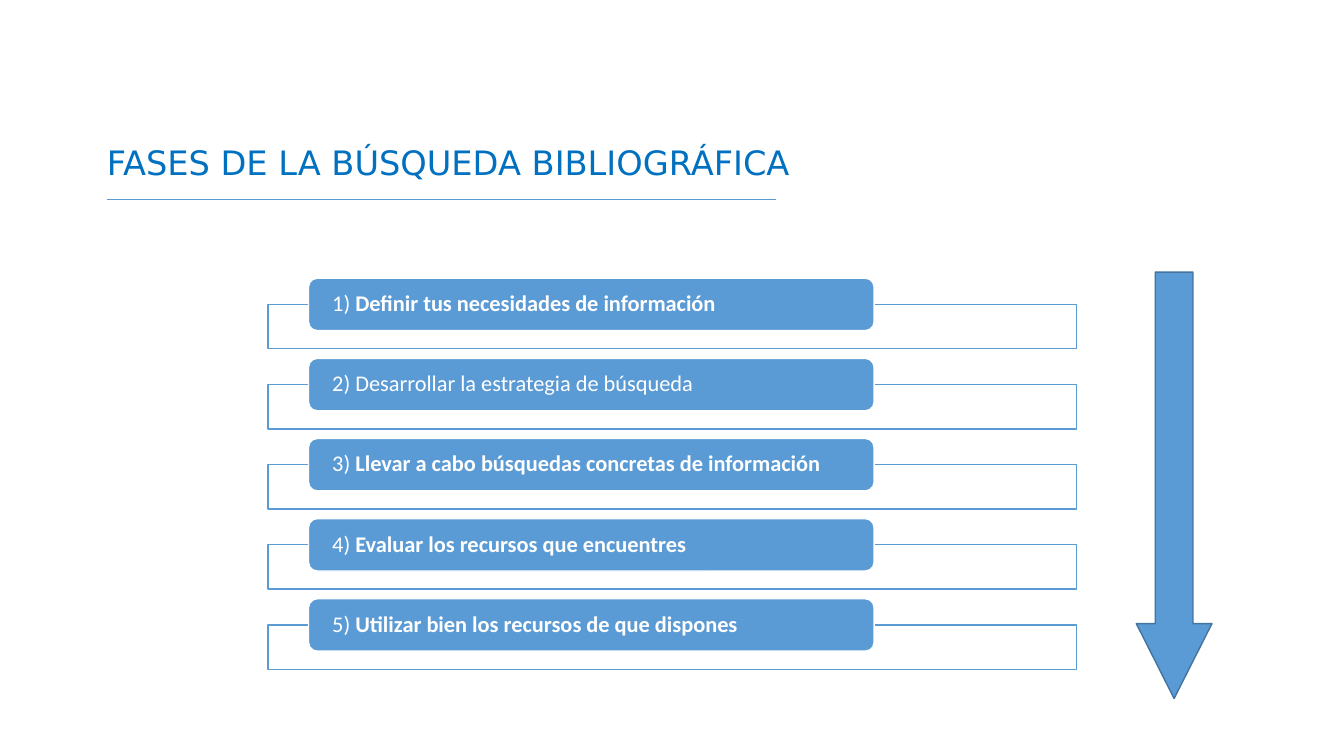
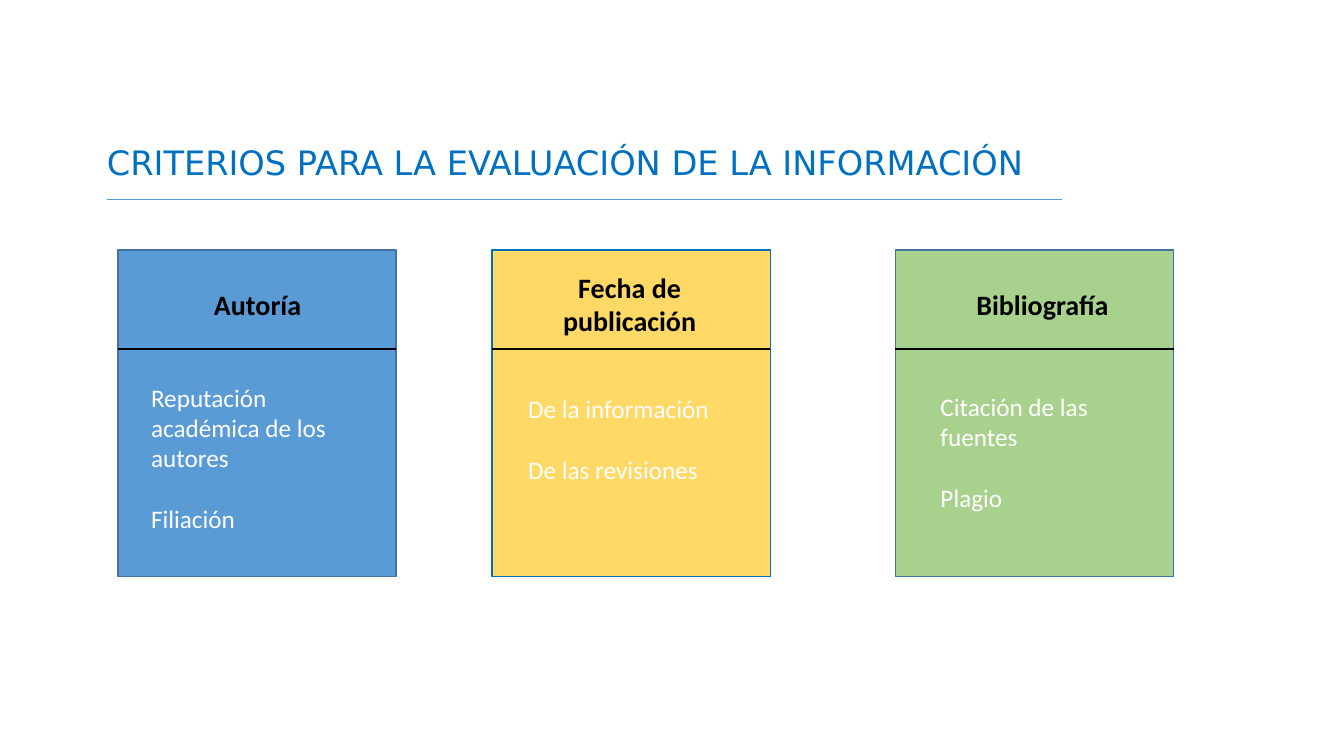
import pptx
import pptx.util
import pptx.dml.color
import pptx.enum.shapes
import pptx.enum.text
import pptx.oxml.ns
import lxml.etree

Inches = pptx.util.Inches
Pt = pptx.util.Pt
SHAPES = pptx.enum.shapes.MSO_SHAPE
ANCHOR = pptx.enum.text.MSO_ANCHOR
ALIGN = pptx.enum.text.PP_ALIGN

COLORS = {
    "title": "0070C0",
    "blue": "5B9BD5",
    "dark_blue": "43739E",
    "yellow": "FFD966",
    "green": "A9D18E",
    "white": "FFFFFF",
    "black": "000000",
}
BODY_FONT = "Calibri"
TITLE_FONT = "DejaVu Sans"

PHASES = [
    ("Definir tus necesidades de información", True),
    ("Desarrollar la estrategia de búsqueda", False),
    ("Llevar a cabo búsquedas concretas de información", True),
    ("Evaluar los recursos que encuentres", True),
    ("Utilizar bien los recursos de que dispones", True),
]
PHASE_TOP = 2.76
PHASE_PITCH = 3.18 / 4

CARD_TOP, CARD_WIDTH, CARD_HEIGHT = 2.48, 2.76, 3.24
CARDS = [
    {"left": 1.17, "fill": "blue", "line": "dark_blue",
     "heading": "Autoría", "heading_box": (1.5, 2.11),
     "items": ["Reputación académica de los autores", "Filiación"],
     "items_box": (1.4, 3.74, 2.46, 1.62)},
    {"left": 4.88, "fill": "yellow", "line": "title",
     "heading": "Fecha de publicación", "heading_box": (5.13, 2.23),
     "items": ["De la información", "De las revisiones"],
     "items_box": (5.14, 3.85, 2.23, 1.01)},
    {"left": 8.88, "fill": "green", "line": "dark_blue",
     "heading": "Bibliografía", "heading_box": (9.22, 2.24),
     "items": ["Citación de las fuentes", "Plagio"],
     "items_box": (9.23, 3.83, 2.24, 1.31)},
]


def rgb(name):
    return pptx.dml.color.RGBColor.from_string(COLORS[name])


def add_run(paragraph, text, size, color, bold=False, font=BODY_FONT):
    run = paragraph.add_run()
    run.text = text
    run.font.name = font
    run.font.size = Pt(size)
    run.font.bold = bold
    run.font.color.rgb = rgb(color)


def add_box(slide, kind, box, fill, line):
    shape = slide.shapes.add_shape(kind, *map(Inches, box))
    shape.shadow.inherit = False
    shape.fill.solid()
    shape.fill.fore_color.rgb = rgb(fill)
    shape.line.color.rgb = rgb(line)
    shape.line.width = Pt(1)
    return shape


def add_line(slide, left, right, top, color, width):
    connector = slide.shapes.add_connector(
        pptx.enum.shapes.MSO_CONNECTOR.STRAIGHT,
        Inches(left), Inches(top), Inches(right), Inches(top))
    connector.line.color.rgb = rgb(color)
    connector.line.width = Pt(width)
    properties = connector.element.find(pptx.oxml.ns.qn("p:spPr"))
    lxml.etree.SubElement(properties, pptx.oxml.ns.qn("a:effectLst"))


def add_text(slide, box, texts, size, color, bold=False, align=ALIGN.LEFT,
             anchor=ANCHOR.TOP, gap=0):
    frame = slide.shapes.add_textbox(*map(Inches, box)).text_frame
    frame.word_wrap = True
    frame.vertical_anchor = anchor
    for index, text in enumerate(texts):
        paragraph = frame.add_paragraph() if index else frame.paragraphs[0]
        paragraph.alignment = align
        if index:
            paragraph.space_before = Pt(gap)
        add_run(paragraph, text, size, color, bold)


def add_titled_slide(presentation, title, line_right):
    slide = presentation.slides.add_slide(presentation.slide_layouts[5])
    shape = slide.shapes.title
    shape.left, shape.top, shape.width, shape.height = map(
        Inches, (0.96, 1.36, 10.02, 0.5))
    frame = shape.text_frame
    frame.word_wrap = True
    frame.auto_size = pptx.enum.text.MSO_AUTO_SIZE.NONE
    frame.vertical_anchor = ANCHOR.TOP
    paragraph = frame.paragraphs[0]
    paragraph.alignment = ALIGN.LEFT
    add_run(paragraph, title, 24, "title", font=TITLE_FONT)
    add_line(slide, 1.06, line_right, 1.98, "blue", 0.5)
    return slide


def add_phase(slide, number, text, bold):
    top = PHASE_TOP + (number - 1) * PHASE_PITCH
    add_box(slide, SHAPES.RECTANGLE, (2.66, top + 0.26, 8.02, 0.44), "white", "blue")
    label = add_box(slide, SHAPES.ROUNDED_RECTANGLE, (3.06, top, 5.61, 0.52),
                    "blue", "white")
    frame = label.text_frame
    frame.word_wrap = True
    frame.vertical_anchor = ANCHOR.MIDDLE
    frame.margin_left = frame.margin_right = Inches(0.21)
    frame.margin_top = frame.margin_bottom = 0
    paragraph = frame.paragraphs[0]
    paragraph.alignment = ALIGN.LEFT
    paragraph.line_spacing = 0.9
    add_run(paragraph, f"{number}) ", 16, "white")
    add_run(paragraph, text, 16, "white", bold)


def add_card(slide, card):
    left = card["left"]
    add_box(slide, SHAPES.RECTANGLE, (left, CARD_TOP, CARD_WIDTH, CARD_HEIGHT),
            card["fill"], card["line"])
    add_line(slide, left, left + CARD_WIDTH, 3.46, "black", 1.5)
    heading_left, heading_width = card["heading_box"]
    add_text(slide, (heading_left, 2.63, heading_width, 0.77), [card["heading"]],
             20, "black", True, ALIGN.CENTER, ANCHOR.MIDDLE)
    add_text(slide, card["items_box"], card["items"], 18, "white", gap=22)


def build_phases(presentation):
    slide = add_titled_slide(presentation, "FASES DE LA BÚSQUEDA BIBLIOGRÁFICA", 7.7)
    for number, (text, bold) in enumerate(PHASES, 1):
        add_phase(slide, number, text, bold)
    arrow = add_box(slide, SHAPES.DOWN_ARROW, (11.27, 2.7, 0.75, 4.23),
                    "blue", "dark_blue")
    arrow.adjustments[0] = 0.5
    arrow.adjustments[1] = 0.99


def build_criteria(presentation):
    slide = add_titled_slide(
        presentation, "CRITERIOS PARA LA EVALUACIÓN DE LA INFORMACIÓN", 10.53)
    for card in CARDS:
        add_card(slide, card)


def main():
    presentation = pptx.Presentation()
    presentation.slide_width = Inches(13.33)
    presentation.slide_height = Inches(7.5)
    build_phases(presentation)
    build_criteria(presentation)
    presentation.save("out.pptx")


if __name__ == "__main__":
    main()
